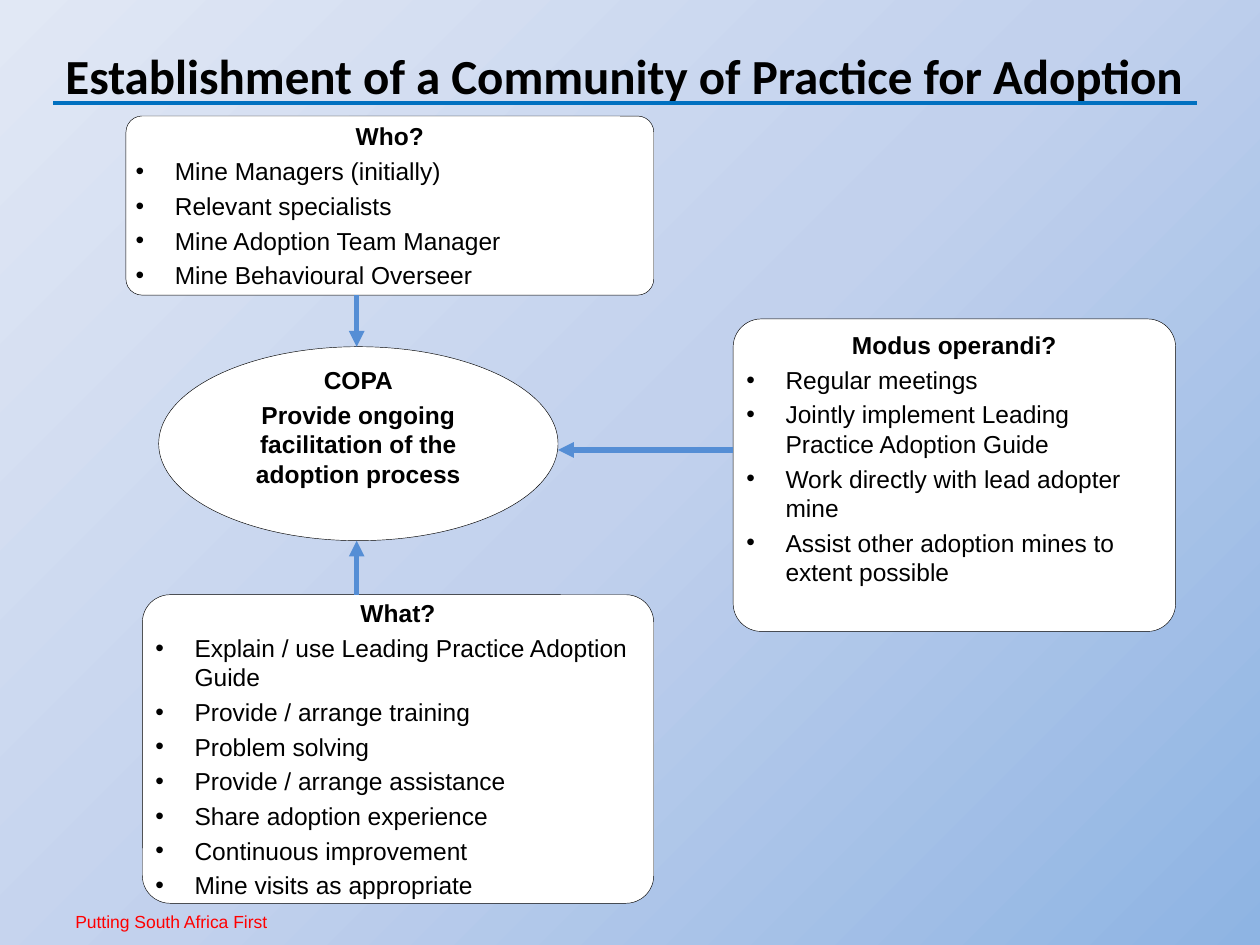
"""Build the slide on establishing a community of practice for adoption."""
from lxml import etree
from pptx import Presentation
from pptx import util as u
from pptx.dml.color import RGBColor
from pptx.enum import shapes, text
from pptx.oxml import parse_xml
from pptx.oxml.ns import nsdecls, qn

COLOURS = {"text": "000000", "panel": "FFFFFF", "rule": "0070C0", "arrow": "558ED5", "footer": "FF0000"}
BACKGROUND = [(0, "8EB4E3"), (50, "C2D1ED"), (100, "E1E8F5")]
TITLE = "Establishment of a Community of Practice for Adoption"
FOOTER = "Putting South Africa First"
INSET, SPARE_LINE, INDENT = 0.1, 0.68, 0.79

COPA = {"box": (3.2, 6.99, 8.05, 3.91), "spare": SPARE_LINE,
        "headings": ["COPA", "Provide ongoing facilitation of the adoption process"], "bullets": []}
WHO = {"box": (2.54, 2.34, 10.64, 3.61), "spare": 0, "headings": ["Who?"],
       "bullets": ["Mine Managers (initially)", "Relevant specialists",
                   "Mine Adoption Team Manager", "Mine Behavioural Overseer"]}
WHAT = {"box": (2.87, 11.99, 10.31, 6.22), "spare": 0, "headings": ["What?"],
        "bullets": ["Explain / use Leading Practice Adoption Guide", "Provide / arrange training",
                    "Problem solving", "Provide / arrange assistance", "Share adoption experience",
                    "Continuous improvement", "Mine visits as appropriate"]}
MODUS = {"box": (14.78, 6.43, 8.92, 6.3), "spare": SPARE_LINE, "headings": ["Modus operandi?"],
         "bullets": ["Regular meetings", "Jointly implement Leading Practice Adoption Guide",
                     "Work directly with lead adopter mine",
                     "Assist other adoption mines to extent possible"]}


def colour(name):
    return RGBColor.from_string(COLOURS[name])


def set_font(paragraph, size, name="Arial", shade="text", bold=False):
    for run in paragraph.runs:
        font = run.font
        font.size, font.name, font.bold = u.Pt(size), name, bold
        font.color.rgb = colour(shade)


def set_insets(frame, inset, spare=0):
    frame.margin_left = frame.margin_right = frame.margin_top = u.Cm(inset)
    frame.margin_bottom = u.Cm(inset + spare)


def add_background(slide):
    stops = "".join(f'<a:gs pos="{position * 1000}"><a:srgbClr val="{shade}"/></a:gs>'
                    for position, shade in BACKGROUND)
    slide.element.cSld.insert(0, parse_xml(
        f'<p:bg {nsdecls("p", "a")}><p:bgPr><a:gradFill rotWithShape="1"><a:gsLst>{stops}</a:gsLst>'
        '<a:path path="circle"><a:fillToRect l="100000" t="100000"/></a:path>'
        '</a:gradFill><a:effectLst/></p:bgPr></p:bg>'))


def add_label(slide, box, wording, inset, wrap, **font):
    frame = slide.shapes.add_textbox(*map(u.Cm, box)).text_frame
    frame.word_wrap = wrap
    set_insets(frame, inset)
    frame.text = wording
    set_font(frame.paragraphs[0], **font)


def add_bullet(paragraph):
    properties = paragraph._p.get_or_add_pPr()
    properties.set("marL", str(u.Cm(INDENT)))
    properties.set("indent", str(-u.Cm(INDENT)))
    etree.SubElement(properties, qn("a:buFont"), typeface="Arial")
    etree.SubElement(properties, qn("a:buChar"), char="•")


def add_panel(slide, panel, kind):
    shape = slide.shapes.add_shape(kind, *map(u.Cm, panel["box"]))
    shape.shadow.inherit = False
    if kind == shapes.MSO_SHAPE.ROUNDED_RECTANGLE:
        shape.adjustments[0] = 0.09
    shape.fill.solid()
    shape.fill.fore_color.rgb = colour("panel")
    shape.line.color.rgb = colour("text")
    shape.line.width = u.Pt(0.25)
    frame = shape.text_frame
    frame.word_wrap = True
    frame.vertical_anchor = text.MSO_ANCHOR.MIDDLE
    set_insets(frame, INSET, panel["spare"])
    frame.text = "\n".join(panel["headings"] + panel["bullets"])
    for index, paragraph in enumerate(frame.paragraphs):
        heading = index < len(panel["headings"])
        paragraph.alignment = text.PP_ALIGN.CENTER if heading else text.PP_ALIGN.LEFT
        if index:
            paragraph.space_before = u.Pt(3)
        if not heading:
            add_bullet(paragraph)
        set_font(paragraph, 14, bold=heading)


def add_line(slide, start, end, shade, width, arrow=False):
    line = slide.shapes.add_connector(shapes.MSO_CONNECTOR.STRAIGHT, *map(u.Cm, start + end))
    line.line.color.rgb = colour(shade)
    line.line.width = u.Pt(width)
    if arrow:
        etree.SubElement(line.line._get_or_add_ln(), qn("a:tailEnd"), type="triangle")
    etree.SubElement(line._element.spPr, qn("a:effectLst"))


def main():
    presentation = Presentation()
    presentation.slide_width, presentation.slide_height = u.Cm(25.4), u.Cm(19.05)
    slide = presentation.slides.add_slide(presentation.slide_layouts[6])
    add_background(slide)
    add_label(slide, (1.42, 18.26, 4.29, 0.64), FOOTER, INSET, False, size=10, shade="footer")
    add_label(slide, (1.07, 0.66, 23.93, 1.45), TITLE, 0.25, True, size=28, name="Calibri", bold=True)
    add_line(slide, (1.07, 2.08), (24.13, 2.08), "rule", 2)

    add_panel(slide, COPA, shapes.MSO_SHAPE.OVAL)
    for panel in (WHO, WHAT, MODUS):
        add_panel(slide, panel, shapes.MSO_SHAPE.ROUNDED_RECTANGLE)

    left, top, width, height = COPA["box"]
    column, row = 7.19, 9.07
    who_bottom = WHO["box"][1] + WHO["box"][3]
    for start, end in [((column, WHAT["box"][1]), (column, top + height)),
                       ((MODUS["box"][0], row), (left + width, row)),
                       ((column, who_bottom), (column, top))]:
        add_line(slide, start, end, "arrow", 3, arrow=True)
    presentation.save("out.pptx")


if __name__ == "__main__":
    main()
